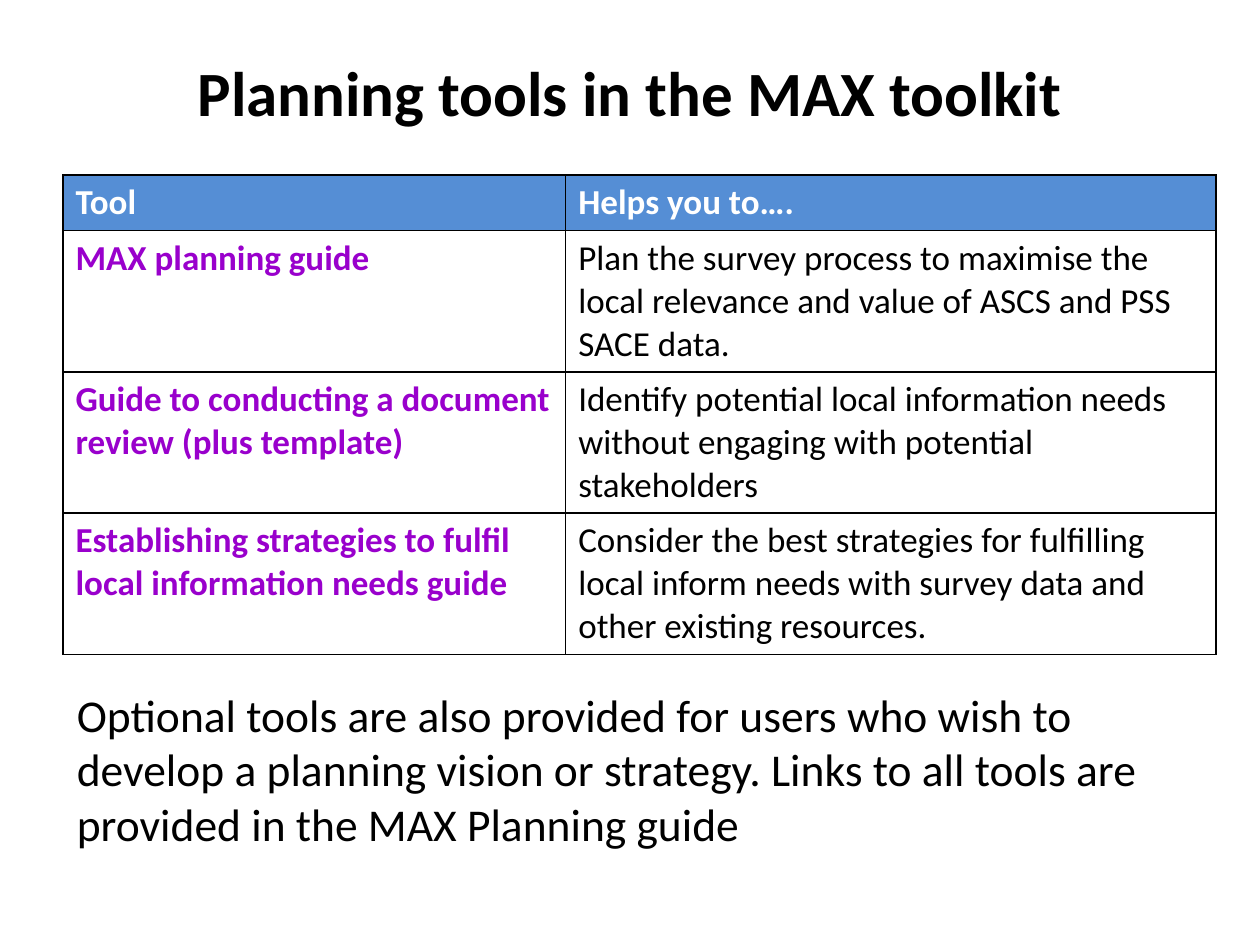
from lxml import etree
from pptx import Presentation
from pptx.dml.color import RGBColor
from pptx.enum import text
from pptx.oxml import ns
from pptx.util import Inches, Pt

BLACK = RGBColor(0x00, 0x00, 0x00)
WHITE = RGBColor(0xFF, 0xFF, 0xFF)
BLUE = RGBColor(0x55, 0x8E, 0xD5)
PURPLE = RGBColor(0x99, 0x00, 0xCC)
FONT = "Calibri"

HEADINGS = ("Tool", "Helps you to….")
TOOLS = (
    ("MAX planning guide",
     "Plan the survey process to maximise the local relevance and value of ASCS and PSS SACE data."),
    ("Guide to conducting a document review (plus template)",
     "Identify potential local information needs without engaging with potential stakeholders"),
    ("Establishing strategies to fulfil local information needs guide",
     "Consider the best strategies for fulfilling local inform needs with survey data and "
     "other existing resources."),
)
CLOSING = ("Optional tools are also provided for users who wish to develop a planning vision "
           "or strategy. Links to all tools are provided in the MAX Planning guide")


def write(frame, words, size, color, bold=False):
    """Set the text of a frame and format its runs."""
    frame.text = words
    for para in frame.paragraphs:
        for span in para.runs:
            span.font.name = FONT
            span.font.size = Pt(size)
            span.font.bold = bold
            span.font.color.rgb = color


def fill_placeholder(box, bounds, words, size, bold=False):
    """Move a placeholder and write its text."""
    box.left, box.top, box.width, box.height = map(Inches, bounds)
    box.text_frame.auto_size = text.MSO_AUTO_SIZE.NONE
    write(box.text_frame, words, size, BLACK, bold)


def remove_bullet(para):
    """Drop the bullet and hanging indent of a paragraph."""
    properties = para._p.get_or_add_pPr()
    properties.set("marL", "0")
    properties.set("indent", "0")
    etree.SubElement(properties, ns.qn("a:buNone"))


def add_borders(cell):
    """Draw a thin black line on each side of a cell."""
    properties = cell._tc.get_or_add_tcPr()
    for position, side in enumerate(("lnL", "lnR", "lnT", "lnB")):
        line = etree.Element(ns.qn(f"a:{side}"), w=str(Pt(1)))
        solid = etree.SubElement(line, ns.qn("a:solidFill"))
        etree.SubElement(solid, ns.qn("a:srgbClr"), val=str(BLACK))
        properties.insert(position, line)


def format_cell(cell, words, color, background, bold):
    """Write a table cell and set its fill and borders."""
    write(cell.text_frame, words, 20, color, bold)
    cell.fill.solid()
    cell.fill.fore_color.rgb = background
    add_borders(cell)


def add_tools_table(page):
    """Add the table of planning tools and their purposes."""
    frame = page.shapes.add_table(len(TOOLS) + 1, len(HEADINGS),
                                  Inches(0.5), Inches(1.39), Inches(9.15), Inches(3.8))
    table = frame.table
    for column, width in zip(table.columns, (3.99, 5.16)):
        column.width = Inches(width)
    for row, height in zip(table.rows, [0.44] + [1.12] * len(TOOLS)):
        row.height = Inches(height)
    for column, heading in enumerate(HEADINGS):
        format_cell(table.cell(0, column), heading, WHITE, BLUE, True)
    for row, (tool, purpose) in enumerate(TOOLS, start=1):
        format_cell(table.cell(row, 0), tool, PURPLE, WHITE, True)
        format_cell(table.cell(row, 1), purpose, BLACK, WHITE, False)


def main():
    """Build the planning tools slide."""
    deck = Presentation()
    deck.slide_width, deck.slide_height = Inches(10), Inches(7.5)
    page = deck.slides.add_slide(deck.slide_layouts[1])
    fill_placeholder(page.shapes.title, (0.5, 0.3, 9, 0.85),
                     "Planning tools in the MAX toolkit", 36, bold=True)
    add_tools_table(page)
    body = page.placeholders[1]
    fill_placeholder(body, (0.51, 5.4, 9.13, 0.94), CLOSING, 26)
    remove_bullet(body.text_frame.paragraphs[0])
    deck.save("out.pptx")


if __name__ == "__main__":
    main()
